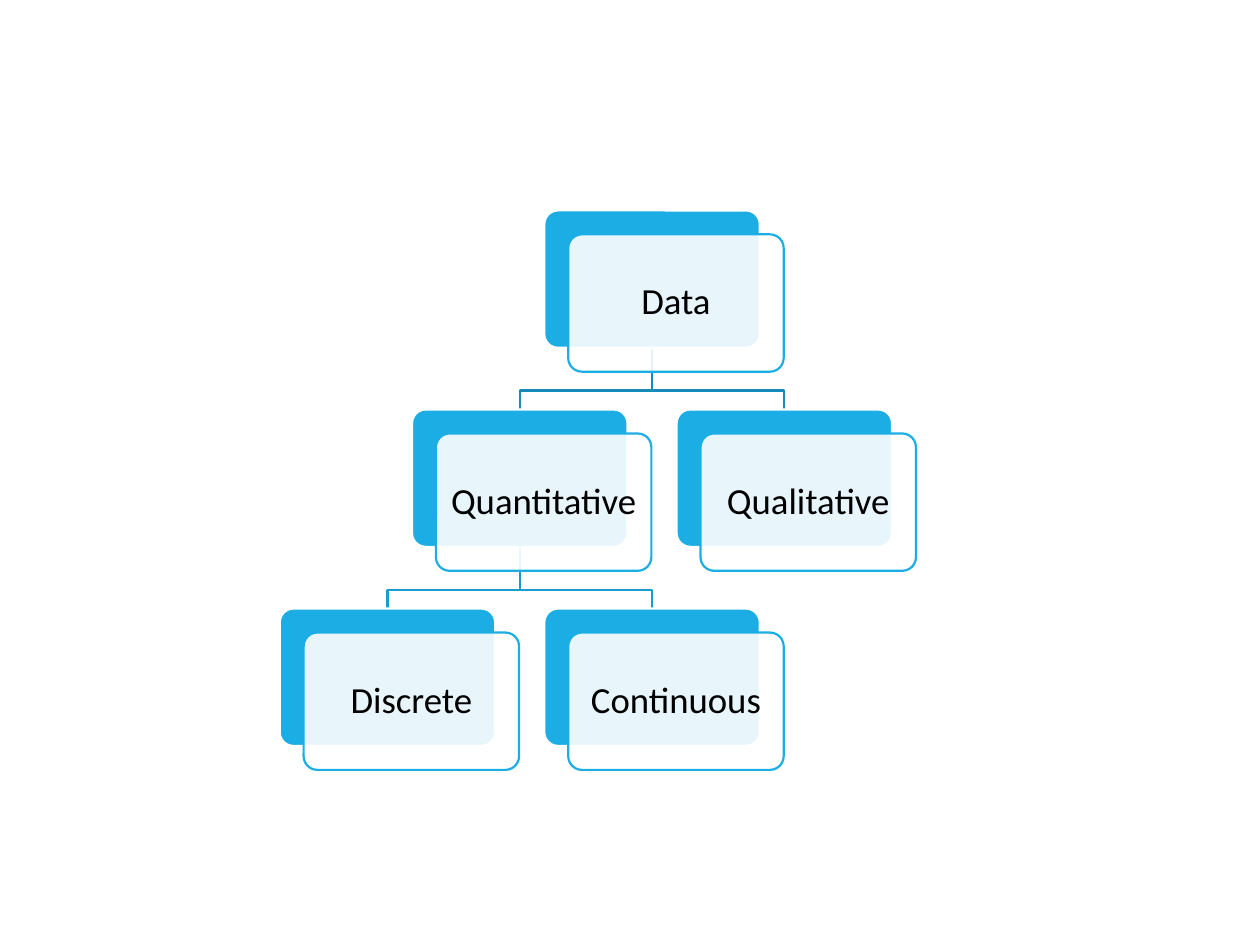
import pptx
import pptx.dml.color
import pptx.enum.shapes
import pptx.enum.text
import pptx.oxml
import pptx.oxml.ns
import pptx.util
from dataclasses import dataclass
from pptx.util import Inches


@dataclass(frozen=True)
class Theme:
    accent: str = "1CADE4"
    white: str = "FFFFFF"
    text: str = "000000"
    branches: tuple = ("168BB7", "199DCF")  # one colour per tree level
    font: str = "Calibri"
    text_size: float = 21
    line_width: float = 1.25


theme = Theme()
rgb = pptx.dml.color.RGBColor.from_string

# Tree: label, column, level, and the label of the parent
nodes = [
    ("Data", 2, 0, None),
    ("Quantitative", 1, 1, "Data"),
    ("Discrete", 0, 2, "Quantitative"),
    ("Continuous", 2, 2, "Quantitative"),
    ("Qualitative", 3, 1, "Data"),
]
left, column_step = 2.22, 1.05
top, level_step = 1.67, 1.58
card_width, card_height = 1.71, 1.09
offset = 0.19  # front card relative to back card
elbow_drop = 0.34
positions = {
    label: (left + column * column_step, top + level * level_step)
    for label, column, level, _ in nodes
}


def style(shape, fill, line):
    shape.shadow.inherit = False
    if fill is None:
        shape.fill.background()
    else:
        shape.fill.solid()
        shape.fill.fore_color.rgb = rgb(fill)
    shape.line.color.rgb = rgb(line)
    shape.line.width = pptx.util.Pt(theme.line_width)


def add_card(x, y, fill, line):
    card = slide.shapes.add_shape(
        pptx.enum.shapes.MSO_SHAPE.ROUNDED_RECTANGLE,
        Inches(x), Inches(y), Inches(card_width), Inches(card_height))
    card.adjustments[0] = 0.1
    style(card, fill, line)
    return card


presentation = pptx.Presentation()
presentation.slide_width = Inches(10)
presentation.slide_height = Inches(7.5)
slide = presentation.slides.add_slide(presentation.slide_layouts[6])

# Branches, behind the cards
for label, _, level, parent in nodes:
    if parent is None:
        continue
    start_x, start_y = positions[parent]
    start_x += card_width / 2
    start_y += card_height
    end_x, end_y = positions[label]
    end_x += card_width / 2
    elbow_y = start_y + elbow_drop
    builder = slide.shapes.build_freeform(Inches(start_x), Inches(start_y))
    builder.add_line_segments(
        [(Inches(x), Inches(y))
         for x, y in ((start_x, elbow_y), (end_x, elbow_y), (end_x, end_y))],
        close=False)
    style(builder.convert_to_shape(), None, theme.branches[level - 1])

# Cards: a solid back and a translucent labelled front
for label, *_ in nodes:
    x, y = positions[label]
    add_card(x, y, theme.accent, theme.white)
    front = add_card(x + offset, y + offset, theme.white, theme.accent)
    color = front.fill._xPr.find(".//" + pptx.oxml.ns.qn("a:srgbClr"))
    color.append(pptx.oxml.parse_xml(
        f'<a:alpha {pptx.oxml.ns.nsdecls("a")} val="90000"/>'))

    frame = front.text_frame
    frame.word_wrap = False
    frame.vertical_anchor = pptx.enum.text.MSO_ANCHOR.MIDDLE
    frame.margin_left = frame.margin_right = Inches(0.09)
    frame.margin_top = frame.margin_bottom = Inches(0.09)
    paragraph = frame.paragraphs[0]
    paragraph.alignment = pptx.enum.text.PP_ALIGN.CENTER
    paragraph.line_spacing = 0.9
    run = paragraph.add_run()
    run.text = label
    run.font.name = theme.font
    run.font.size = pptx.util.Pt(theme.text_size)
    run.font.color.rgb = rgb(theme.text)

presentation.save("out.pptx")
